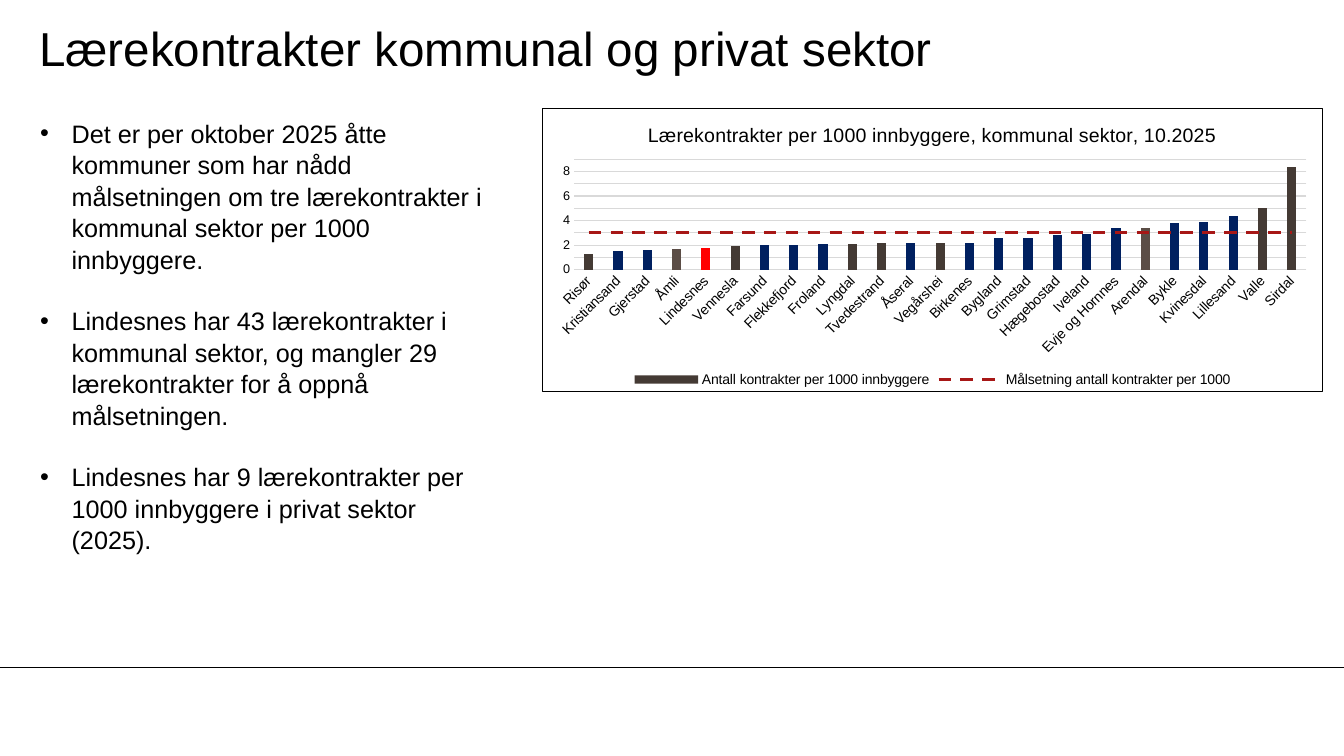
from lxml import etree
from pptx import Presentation, util as u
from pptx.chart.data import CategoryChartData
from pptx.dml.color import RGBColor
from pptx.enum import chart as ch, dml, shapes, text
from pptx.oxml import parse_xml
from pptx.oxml.ns import nsdecls, qn

Pt = u.Pt
COLORS = {"black": "000000", "white": "FFFFFF", "grid": "D9D9D9", "brown": "443A34",
          "light_brown": "5B4D46", "navy": "002060", "red": "FF0000", "target": "A71716"}


def rgb(name):
    return RGBColor.from_string(COLORS[name])


def style_font(font, size):
    for key, value in {"name": "Arial", "size": Pt(size), "bold": False}.items():
        setattr(font, key, value)
    font.color.rgb = rgb("black")


prs = Presentation()
prs.slide_width, prs.slide_height = Pt(960), Pt(540)
slide = prs.slides.add_slide(prs.slide_layouts[6])

# Footer rule
footer_rule = slide.shapes.add_connector(
    shapes.MSO_CONNECTOR.STRAIGHT, 0, Pt(476.6), Pt(960), Pt(476.6))
footer_rule.line.color.rgb = rgb("black")
footer_rule.line.width = Pt(0.75)
etree.SubElement(footer_rule._element.spPr, qn("a:effectLst"))

# Heading
heading = slide.shapes.add_textbox(Pt(28), Pt(7.2), Pt(799), Pt(54)).text_frame
heading_format = {"word_wrap": True, "vertical_anchor": text.MSO_ANCHOR.MIDDLE,
                  "margin_left": 0, "margin_right": 0, "margin_top": 0, "margin_bottom": 0}
for key, value in heading_format.items():
    setattr(heading, key, value)
heading.text = "Lærekontrakter kommunal og privat sektor"
style_font(heading.paragraphs[0].runs[0].font, 34)

# Key points
points = [
    "Det er per oktober 2025 åtte kommuner som har nådd målsetningen om tre "
    "lærekontrakter i kommunal sektor per 1000 innbyggere.",
    "Lindesnes har 43 lærekontrakter i kommunal sektor, og mangler 29 "
    "lærekontrakter for å oppnå målsetningen.",
    "Lindesnes har 9 lærekontrakter per 1000 innbyggere i privat sektor (2025).",
]
key_points = slide.shapes.add_textbox(Pt(21.6), Pt(80), Pt(332), Pt(334)).text_frame
key_points.word_wrap = True
for i, point in enumerate(points):
    para = key_points.paragraphs[0] if i == 0 else key_points.add_paragraph()
    props = para._p.get_or_add_pPr()
    props.set("marL", str(Pt(22.5)))
    props.set("indent", str(-Pt(22.5)))
    etree.SubElement(props, qn("a:buFont"), typeface="Arial")
    etree.SubElement(props, qn("a:buChar"), char="•")
    para.line_spacing = 1.04
    if i:
        para.space_before = Pt(21.6)
    run = para.add_run()
    run.text = point
    style_font(run.font, 18)

# Contracts per municipality, with bar colour
municipalities = [
    ("Risør", 1.3, "brown"), ("Kristiansand", 1.5, "navy"), ("Gjerstad", 1.6, "navy"),
    ("Åmli", 1.7, "light_brown"), ("Lindesnes", 1.8, "red"), ("Vennesla", 1.9, "brown"),
    ("Farsund", 2, "navy"), ("Flekkefjord", 2, "navy"), ("Froland", 2.1, "navy"),
    ("Lyngdal", 2.1, "brown"), ("Tvedestrand", 2.2, "brown"), ("Åseral", 2.2, "navy"),
    ("Vegårshei", 2.2, "brown"), ("Birkenes", 2.2, "navy"), ("Bygland", 2.6, "navy"),
    ("Grimstad", 2.6, "navy"), ("Hægebostad", 2.8, "navy"), ("Iveland", 2.9, "navy"),
    ("Evje og Hornnes", 3.4, "navy"), ("Arendal", 3.4, "light_brown"), ("Bykle", 3.8, "navy"),
    ("Kvinesdal", 3.9, "navy"), ("Lillesand", 4.4, "navy"), ("Valle", 5, "brown"),
    ("Sirdal", 8.4, "brown"),
]
names, rates, bar_colors = zip(*municipalities)
data = CategoryChartData(number_format="0.0")
data.categories = names
data.add_series("Antall kontrakter per 1000 innbyggere", rates)
data.add_series("Målsetning antall kontrakter per 1000", [3] * len(names))
chart = slide.shapes.add_chart(ch.XL_CHART_TYPE.COLUMN_CLUSTERED, Pt(387.4), Pt(77),
                               Pt(557.3), Pt(203), data).chart
style_font(chart.font, 10)
chart.has_title = True
chart.chart_title.include_in_layout = False
chart.chart_title.text_frame.text = "Lærekontrakter per 1000 innbyggere, kommunal sektor, 10.2025"
style_font(chart.chart_title.text_frame.paragraphs[0].runs[0].font, 14)
chart.has_legend = True
chart.legend.position = ch.XL_LEGEND_POSITION.BOTTOM
chart.legend.include_in_layout = False
style_font(chart.legend.font, 10)

# Bars
bars = chart.plots[0]
bars.gap_width, bars.overlap, bars.vary_by_categories = 219, -27, False
rate_series, target_series = bars.series
rate_series.format.fill.solid()
rate_series.format.fill.fore_color.rgb = rgb("brown")
for i, color in enumerate(bar_colors):
    if color != "brown":
        bar_fill = rate_series.points[i].format.fill
        bar_fill.solid()
        bar_fill.fore_color.rgb = rgb(color)

# Axes
for axis, size in ((chart.category_axis, 10), (chart.value_axis, 9)):
    axis.major_tick_mark = axis.minor_tick_mark = ch.XL_TICK_MARK.NONE
    style_font(axis.tick_labels.font, size)
municipality_axis, rate_axis = chart.category_axis, chart.value_axis
municipality_axis._element.find(qn("c:txPr")).find(qn("a:bodyPr")).set("rot", "-2700000")
rate_axis.minimum_scale, rate_axis.maximum_scale, rate_axis.major_unit = 0, 9, 1
rate_axis.tick_labels.number_format = "0"
rate_axis.tick_labels.number_format_is_linked = False
rate_axis.format.line.fill.background()
for line in (municipality_axis.format.line, rate_axis.major_gridlines.format.line):
    line.color.rgb = rgb("grid")
    line.width = Pt(0.75)

# Target series becomes a dashed line on the same axes
bar_xml = chart._chartSpace.find(".//" + qn("c:barChart"))
line_xml = parse_xml(f'<c:lineChart {nsdecls("c")}><c:grouping val="standard"/>'
                     '<c:varyColors val="0"/><c:marker val="1"/></c:lineChart>')
target_xml = bar_xml.findall(qn("c:ser"))[1]
for bar_only in target_xml.findall(qn("c:invertIfNegative")):
    target_xml.remove(bar_only)
line_xml.insert(2, target_xml)
for axis_id in bar_xml.findall(qn("c:axId")):
    etree.SubElement(line_xml, qn("c:axId"), val=axis_id.get("val"))
bar_xml.addnext(line_xml)
target = chart.plots[1].series[0]
target.smooth = False
target.marker.style = ch.XL_MARKER_STYLE.NONE
target.format.line.color.rgb = rgb("target")
target.format.line.width = Pt(2.25)
target.format.line.dash_style = dml.MSO_LINE.DASH

# Plot area position and chart frame
plot_area = chart._chartSpace.find(".//" + qn("c:plotArea"))
for old_layout in plot_area.findall(qn("c:layout")):
    plot_area.remove(old_layout)
plot_area.insert(0, parse_xml(
    f'<c:layout {nsdecls("c")}><c:manualLayout><c:layoutTarget val="inner"/>'
    '<c:xMode val="edge"/><c:yMode val="edge"/><c:x val="0.04"/><c:y val="0.18"/>'
    '<c:w val="0.94"/><c:h val="0.39"/></c:manualLayout></c:layout>'))
chart._chartSpace.find(qn("c:chart")).addnext(parse_xml(
    f'<c:spPr {nsdecls("c", "a")}><a:solidFill><a:srgbClr val="{COLORS["white"]}"/></a:solidFill>'
    f'<a:ln w="{Pt(0.75)}"><a:solidFill><a:srgbClr val="{COLORS["black"]}"/></a:solidFill></a:ln>'
    '</c:spPr>'))

prs.save("out.pptx")
